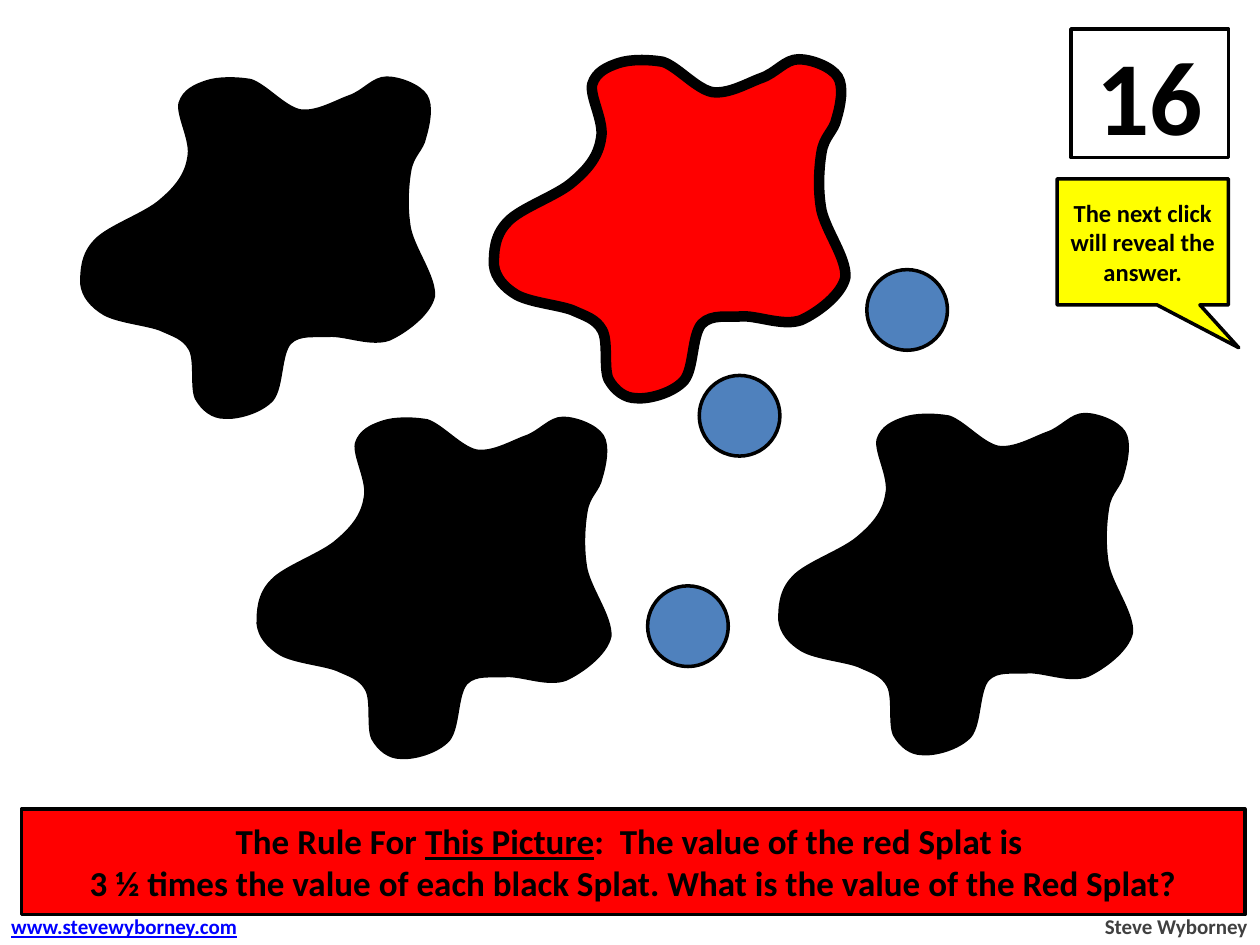
from lxml import etree
from pptx import Presentation
from pptx import util as u
from pptx.dml.color import RGBColor
from pptx.enum import shapes, text
from pptx.oxml.ns import qn

BLACK = RGBColor(0x00, 0x00, 0x00)
WHITE = RGBColor(0xFF, 0xFF, 0xFF)
RED = RGBColor(0xFF, 0x00, 0x00)
YELLOW = RGBColor(0xFF, 0xFF, 0x00)
BLUE = RGBColor(0x4F, 0x81, 0xBD)
LINK_BLUE = RGBColor(0x00, 0x00, 0xFF)
GREY = RGBColor(0x40, 0x40, 0x40)

# The slide is a grid of 100 columns by 75 rows, each cell 0.1 inch square
COLUMNS = 100

# Splat outline as seen upright, in hundredths of an inch:
# a start point, then curves of two control points and an end point
SPLAT_HEIGHT = 270
SPLAT_START = (18, 187)
SPLAT_CURVES = [
    [(8, 181), (1, 173), (0, 163)],
    [(0, 154), (0, 140), (11, 129)],
    [(21, 118), (51, 108), (63, 97)],
    [(76, 86), (83, 76), (85, 63)],
    [(88, 50), (76, 30), (78, 20)],
    [(81, 10), (90, 6), (99, 3)],
    [(108, 0), (122, 0), (134, 2)],
    [(146, 6), (160, 23), (173, 26)],
    [(186, 28), (201, 19), (212, 15)],
    [(224, 11), (231, 0), (242, 0)],
    [(252, 0), (268, 6), (273, 14)],
    [(278, 22), (275, 37), (272, 47)],
    [(270, 57), (262, 61), (260, 74)],
    [(258, 86), (257, 104), (260, 120)],
    [(264, 137), (280, 158), (279, 173)],
    [(276, 187), (257, 201), (244, 207)],
    [(230, 212), (211, 204), (198, 204)],
    [(185, 205), (173, 202), (165, 210)],
    [(157, 219), (159, 245), (151, 255)],
    [(142, 265), (123, 270), (113, 269)],
    [(104, 269), (96, 263), (91, 254)],
    [(87, 245), (91, 224), (86, 215)],
    [(81, 206), (73, 204), (62, 199)],
    [(51, 195), (29, 193), (18, 187)],
]


class SplatSlide:
    font = "Calibri"
    outline = 2

    def __init__(self, deck):
        self.slide = deck.slides.add_slide(deck.slide_layouts[6])
        self.cell = deck.slide_width // COLUMNS

    def grid(self, *cells):
        return [u.Emu(round(c * self.cell)) for c in cells]

    def paint(self, shape, fill, line_width):
        shape.shadow.inherit = False
        shape.fill.solid()
        shape.fill.fore_color.rgb = fill
        shape.line.color.rgb = BLACK
        shape.line.width = u.Pt(line_width)

    def letter(self, shape, lines, size, color, align, underlined=()):
        """Each line is a list of run texts."""
        frame = shape.text_frame
        for number, runs in enumerate(lines):
            paragraph = frame.add_paragraph() if number else frame.paragraphs[0]
            paragraph.alignment = align
            for wording in runs:
                run = paragraph.add_run()
                run.text = wording
                run.font.name = self.font
                run.font.size = u.Pt(size)
                run.font.bold = True
                run.font.color.rgb = color
                run.font.underline = wording in underlined

    def block(self, kind, box, fill, lines=(), size=14, underlined=()):
        shape = self.slide.shapes.add_shape(kind, *self.grid(*box))
        self.paint(shape, fill, self.outline)
        shape.text_frame.word_wrap = True
        shape.text_frame.vertical_anchor = text.MSO_ANCHOR.MIDDLE
        self.letter(shape, lines, size, BLACK, text.PP_ALIGN.CENTER, underlined)
        return shape

    def footer(self, box, wording, color, align, underlined=()):
        label = self.slide.shapes.add_textbox(*self.grid(*box))
        label.text_frame.word_wrap = False
        label.text_frame.auto_size = text.MSO_AUTO_SIZE.SHAPE_TO_FIT_TEXT
        self.letter(label, [[wording]], 12, color, align, underlined)

    def splat(self, left, top, fill, line_width):
        # The outline lies on its side and is turned upright by 270 degrees
        def lay_down(point):
            return SPLAT_HEIGHT - point[1], point[0]

        points = [lay_down(p) for curve in SPLAT_CURVES for p in curve]
        builder = self.slide.shapes.build_freeform(
            *lay_down(SPLAT_START), scale=u.Inches(0.01))
        builder.add_line_segments(points, close=True)
        splat = builder.convert_to_shape(*self.grid(left, top))
        splat.rotation = 270
        self.paint(splat, fill, line_width)
        # Turn every three straight segments into one Bézier curve
        segments = list(splat.element.iter(qn("a:lnTo")))
        for first in range(0, len(segments), 3):
            curve = etree.Element(qn("a:cubicBezTo"))
            segments[first].addprevious(curve)
            for segment in segments[first:first + 3]:
                curve.append(segment[0])
                segment.getparent().remove(segment)


def main():
    deck = Presentation()
    deck.slide_width, deck.slide_height = u.Inches(10), u.Inches(7.5)
    page = SplatSlide(deck)
    kinds = shapes.MSO_SHAPE

    # Total
    page.block(kinds.RECTANGLE, (85, 2.3, 12.5, 10.2), WHITE, [["16"]], 60)

    # Footer
    page.footer((86.6, 72, 13.4, 3), "Steve Wyborney", GREY, text.PP_ALIGN.RIGHT)
    site = "www.stevewyborney.com"
    page.footer((-0.1, 72, 20.5, 3), site, LINK_BLUE, text.PP_ALIGN.LEFT, [site])

    # Splats: three black and a red one
    for left, top in [(62.4, 32.4), (21, 32.7), (7, 5.7)]:
        page.splat(left, top, BLACK, 2)
    page.splat(39.7, 4.2, RED, 6)

    # Rule
    phrase = "This Picture"
    page.block(kinds.RECTANGLE, (1.7, 64.2, 97.1, 8.4), RED, [
        ["The Rule For ", phrase, ":  The value of the red Splat is "],
        ["3 ½ times the value of each black Splat. "
         "What is the value of the Red Splat?"],
    ], 20, [phrase])

    # Hint
    hint = page.block(kinds.RECTANGULAR_CALLOUT, (83.9, 14.2, 13.6, 10), YELLOW,
                      [["The next click will reveal the answer."]])
    hint.adjustments[0], hint.adjustments[1] = 0.56, 0.84

    # Loose dots
    for left, top in [(51.4, 46.5), (55.5, 29.8), (68.8, 21.4)]:
        page.block(kinds.OVAL, (left, top, 6.4, 6.4), BLUE)

    deck.save("out.pptx")


if __name__ == "__main__":
    main()
